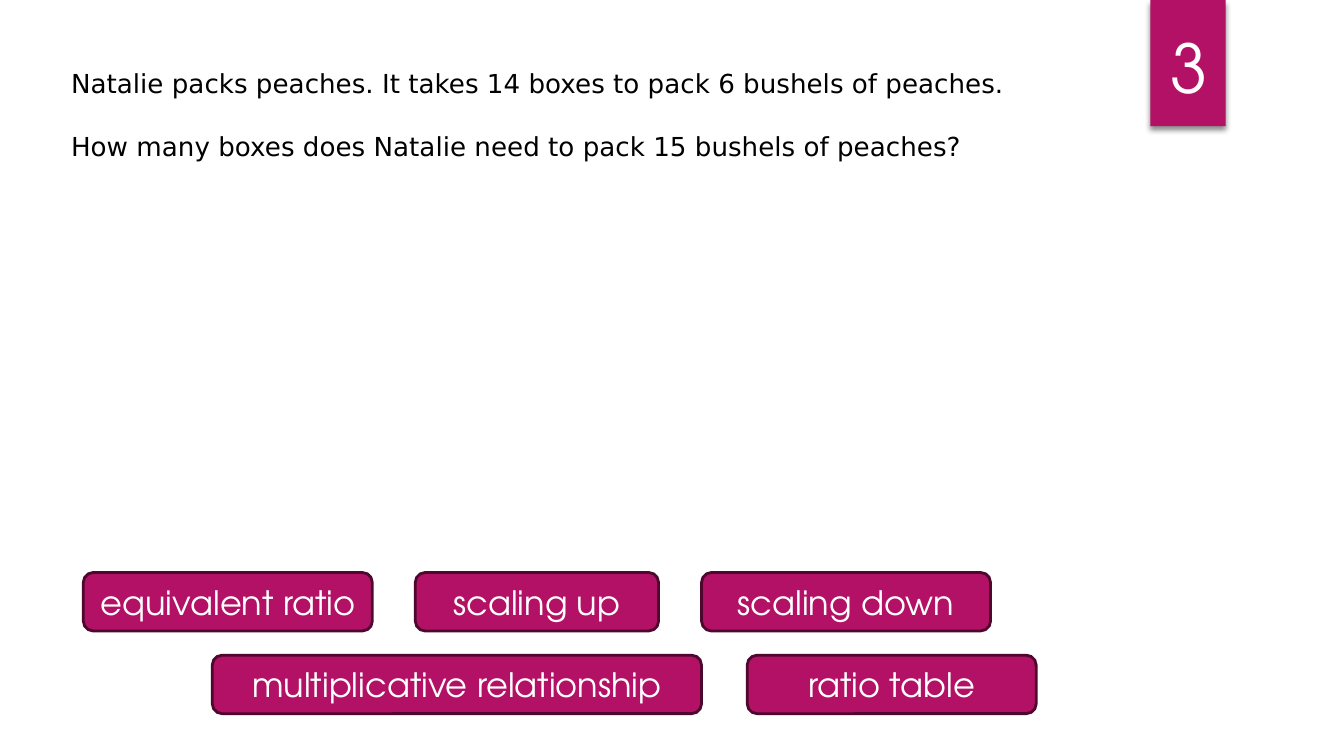
from lxml import etree
from pptx import Presentation
from pptx import util as u
from pptx.dml.color import RGBColor
from pptx.enum import shapes, text
from pptx.oxml.ns import qn

PINK = RGBColor(0xB3, 0x11, 0x66)
PLUM = RGBColor(0x4E, 0x07, 0x2D)
WHITE = RGBColor(0xFF, 0xFF, 0xFF)
BLACK = RGBColor(0x00, 0x00, 0x00)
HEAD = "TeX Gyre Adventor"
BODY = "DejaVu Sans"
CELL = u.Inches(0.1)
COLS, ROWS = 100, 56.25


def grid(*cells):
    return [u.Emu(round(n * CELL)) for n in cells]


def write(frame, *lines, size=18, font=HEAD, color=WHITE,
          align=text.PP_ALIGN.CENTER, gap=0):
    """Fill a frame with one paragraph per line, gap points apart."""
    for i, line in enumerate(lines):
        para = frame.add_paragraph() if i else frame.paragraphs[0]
        para.alignment = align
        if i:
            para.space_before = u.Pt(gap)
        run = para.add_run()
        run.text = line
        run.font.size = u.Pt(size)
        run.font.name = font
        run.font.color.rgb = color


class Board:
    """Style and current slide; places are in grid cells."""

    def __init__(self, deck):
        self.slide = deck.slides.add_slide(deck.slide_layouts[6])
        self.fill, self.edge = PINK, PLUM

    def block(self, kind, *place):
        box = self.slide.shapes.add_shape(kind, *grid(*place))
        box.shadow.inherit = False
        box.fill.solid()
        box.fill.fore_color.rgb = self.fill
        box.line.fill.background()
        return box

    def label(self, *place, lines, **style):
        box = self.slide.shapes.add_textbox(*grid(*place))
        box.text_frame.word_wrap = True
        box.text_frame.auto_size = text.MSO_AUTO_SIZE.SHAPE_TO_FIT_TEXT
        write(box.text_frame, *lines, **style)

    def ribbon(self, *place):
        """Draw the number's flag with a soft shadow below it."""
        box = self.block(shapes.MSO_SHAPE.RECTANGLE, *place)
        glow = box._element.spPr.find(qn("a:effectLst"))
        shade = etree.SubElement(glow, qn("a:outerShdw"), blurRad="38100",
                                 dist="25400", dir="5400000", rotWithShape="0")
        tint = etree.SubElement(shade, qn("a:srgbClr"), val="000000")
        etree.SubElement(tint, qn("a:alpha"), val="45000")

    def term(self, word, *place):
        box = self.block(shapes.MSO_SHAPE.ROUNDED_RECTANGLE, *place)
        box.line.color.rgb = self.edge
        box.line.width = u.Pt(1.5)
        box.text_frame.word_wrap = True
        box.text_frame.vertical_anchor = text.MSO_ANCHOR.MIDDLE
        write(box.text_frame, word)

    def bank(self, left, top, gap, terms):
        """Lay out a row of (word, width) terms with equal gaps."""
        for word, width in terms:
            self.term(word, left, top, width, 4.35)
            left += width + gap


def main():
    deck = Presentation()
    deck.slide_width, deck.slide_height = grid(COLS, ROWS)
    board = Board(deck)
    board.ribbon(85.6, 0, 5.6, 9.4)
    board.bank(6.2, 42.6, 3.2, [("equivalent ratio", 21.5),
                                ("scaling up", 18.1),
                                ("scaling down", 21.5)])
    board.label(4.3, 4.5, 85.1, 8.1, lines=[
        "Natalie packs peaches. It takes 14 boxes to pack 6 bushels of peaches.",
        "How many boxes does Natalie need to pack 15 bushels of peaches?",
    ], size=14, font=BODY, color=BLACK, align=text.PP_ALIGN.LEFT, gap=17)
    board.bank(15.8, 48.75, 3.4, [("multiplicative relationship", 36.4),
                                  ("ratio table", 21.5)])
    board.label(86.1, 1.5, 4.7, 7.1, lines=["3"], size=36,
                align=text.PP_ALIGN.LEFT)
    deck.save("out.pptx")


if __name__ == "__main__":
    main()
